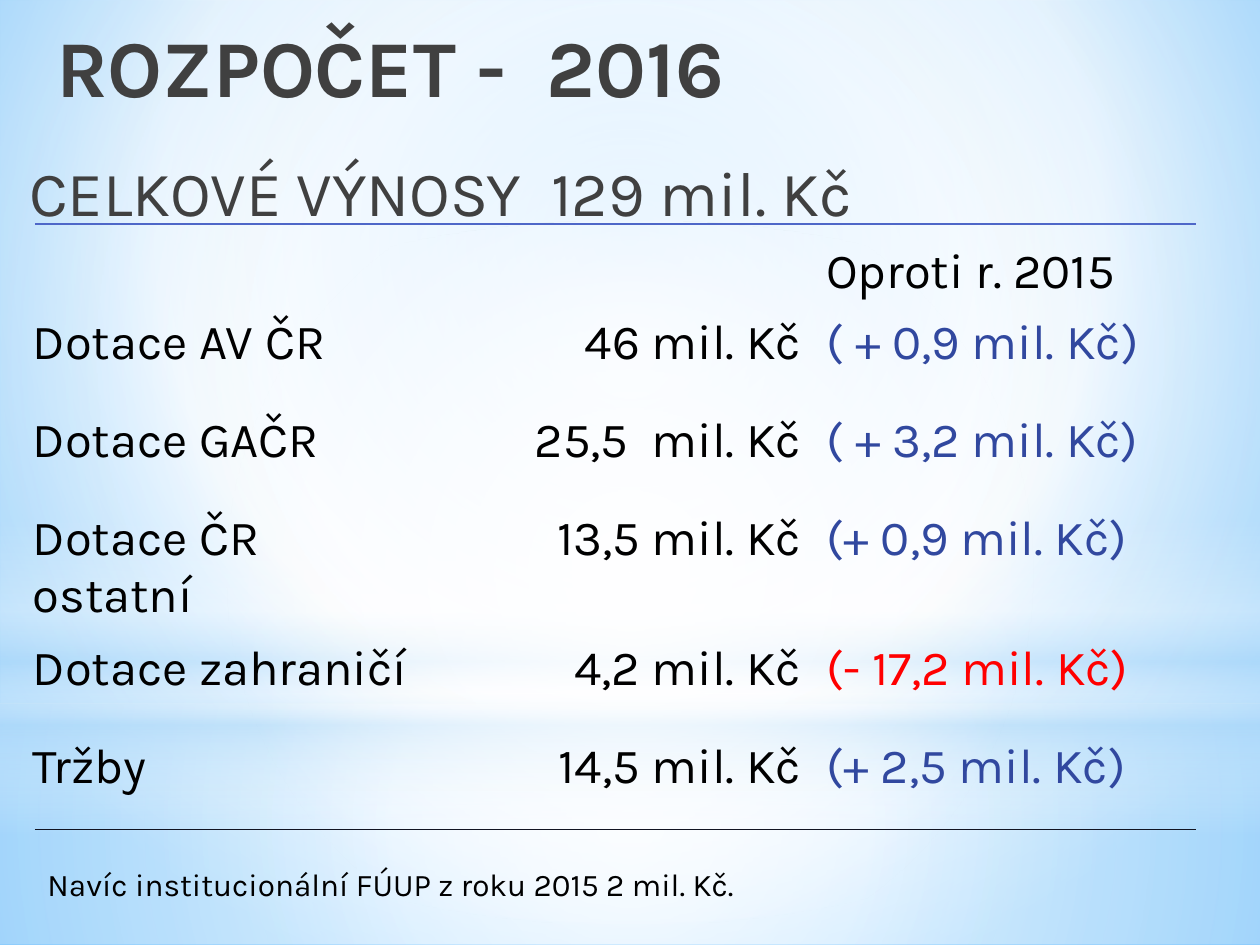
"""Build the 2016 budget slide."""
from dataclasses import dataclass

from lxml.etree import SubElement as Sub
from pptx import Presentation
from pptx.dml.color import RGBColor as RGB
from pptx.enum.shapes import MSO_CONNECTOR as Conn, MSO_SHAPE as Form
from pptx.enum.text import PP_ALIGN as Align
from pptx.oxml import parse_xml
from pptx.oxml.ns import nsdecls, qn
from pptx.util import Pt


@dataclass(frozen=True)
class Theme:
    font: str = "Karla"
    ink: str = "000000"
    gray: str = "404040"
    gain: str = "31489F"
    loss: str = "FF0000"
    rule: str = "4E67C8"
    base: str = "111422"
    white: str = "FFFFFF"
    haze: str = "B4DCFA"
    sky: str = "9ED5FF"
    deep: str = "5BB9FF"
    title: int = 46
    head: int = 36
    body: int = 28
    note: int = 18
    plain: str = "{2D5ABB26-0587-4C30-8999-92F81FD0307C}"


class Deck:
    def __init__(self, theme):
        self.theme = theme
        self.show = Presentation()
        self.show.slide_width, self.show.slide_height = Pt(720), Pt(540)
        self.slide = self.show.slides.add_slide(self.show.slide_layouts[6])

    def blend(self, host, stops, focus=None):
        grad = parse_xml(f'<a:gradFill {nsdecls("a")} rotWithShape="1"/>')
        group = Sub(grad, qn("a:gsLst"))
        for pos, tint, alpha in stops:
            stop = Sub(group, qn("a:gs"), pos=str(pos * 1000))
            color = Sub(stop, qn("a:srgbClr"), val=tint)
            if alpha < 100:
                Sub(color, qn("a:alpha"), val=str(alpha * 1000))
        if focus:
            way = Sub(grad, qn("a:path"), path="circle")
            sides = {side: str(part * 1000) for side, part in zip("ltrb", focus)}
            Sub(way, qn("a:fillToRect"), **sides)
        else:
            Sub(grad, qn("a:lin"), ang="5400000", scaled="0")
        host.replace(host.find(qn("a:solidFill")), grad)

    def back(self, stops, focus):
        self.slide.background.fill.solid()
        host = self.slide.element.find(".//" + qn("p:bgPr"))
        self.blend(host, stops, focus)

    def glow(self, form, top, high, stops, focus=None):
        shape = self.slide.shapes.add_shape(form, 0, Pt(top), Pt(720), Pt(high))
        shape.shadow.inherit = False
        shape.line.fill.background()
        shape.fill.solid()
        self.blend(shape.element.spPr, stops, focus)

    def put(self, para, text, size, color, bold=False):
        run = para.add_run()
        run.text = text
        font = run.font
        font.name, font.size, font.bold = self.theme.font, Pt(size), bold
        font.color.rgb = RGB.from_string(color)

    def text(self, box, text, size, color, bold=False):
        frame = self.slide.shapes.add_textbox(*map(Pt, box)).text_frame
        frame.word_wrap = True
        self.put(frame.paragraphs[0], text, size, color, bold)

    def line(self, top, color):
        line = self.slide.shapes.add_connector(
            Conn.STRAIGHT, Pt(20), Pt(top), Pt(683.5), Pt(top))
        line.line.color.rgb = RGB.from_string(color)
        line.line.width = Pt(0.75)
        Sub(line.element.spPr, qn("a:effectLst"))

    def table(self, left, top, wide, high, rows):
        frame = self.slide.shapes.add_table(
            len(rows), len(wide), Pt(left), Pt(top), Pt(sum(wide)), Pt(sum(high)))
        grid = frame.table
        grid.first_row = grid.horz_banding = False
        frame.element.find(".//" + qn("a:tableStyleId")).text = self.theme.plain
        for col, size in zip(grid.columns, wide):
            col.width = Pt(size)
        for row, size, items in zip(grid.rows, high, rows):
            row.height = Pt(size)
            for spot, (cell, text) in enumerate(zip(row.cells, items)):
                cell.fill.background()
                para = cell.text_frame.paragraphs[0]
                para.alignment = Align.RIGHT if spot == 1 else Align.LEFT
                if text:
                    self.put(para, text, self.theme.body, self.tone(text))

    def tone(self, text):
        if not text.startswith("("):
            return self.theme.ink
        return self.theme.loss if "-" in text else self.theme.gain


def main():
    theme = Theme()
    deck = Deck(theme)
    white, haze = theme.white, theme.haze
    mid = (50, 50, 50, 50)
    deck.back([(0, theme.sky, 100), (60, white, 100), (100, theme.deep, 100)],
              (20, 10, 20, 60))
    deck.glow(Form.RECTANGLE, 402, 138,
              [(0, white, 91), (37, white, 76), (100, haze, 79)], mid)
    deck.glow(Form.RECTANGLE, 0, 402,
              [(0, white, 89), (48, white, 62), (100, haze, 79)], mid)
    deck.glow(Form.RECTANGLE, 297, 180,
              [(0, white, 0), (29, white, 30), (45, haze, 40),
               (55, white, 26), (65, haze, 60), (100, white, 0)])
    deck.glow(Form.OVAL, 126, 402, [(0, white, 100), (56, white, 0)], mid)
    deck.text((25, 6, 695, 90), "ROZPOČET -  2016", theme.title, theme.gray, True)
    deck.text((9.5, 84, 710, 57), "CELKOVÉ VÝNOSY  129 mil. Kč",
              theme.head, theme.gray)
    deck.line(128, theme.rule)
    deck.line(474, theme.base)
    rows = [
        ("", "", "Oproti r. 2015"),
        ("Dotace AV ČR", "46 mil. Kč", "( + 0,9 mil. Kč)"),
        ("Dotace GAČR", "25,5  mil. Kč", "( + 3,2 mil. Kč)"),
        ("Dotace ČR ostatní", "13,5 mil. Kč", "(+ 0,9 mil. Kč)"),
        ("Dotace zahraničí", "4,2 mil. Kč", "(- 17,2 mil. Kč)"),
        ("Tržby", "14,5 mil. Kč", "(+ 2,5 mil. Kč)"),
    ]
    deck.table(11.5, 135.5, (241, 212.5, 227), [39] + [55.8] * 5, rows)
    deck.text((20, 491, 538.5, 29),
              "Navíc institucionální FÚUP z roku 2015 2 mil. Kč.",
              theme.note, theme.ink)
    deck.show.save("out.pptx")


if __name__ == "__main__":
    main()
